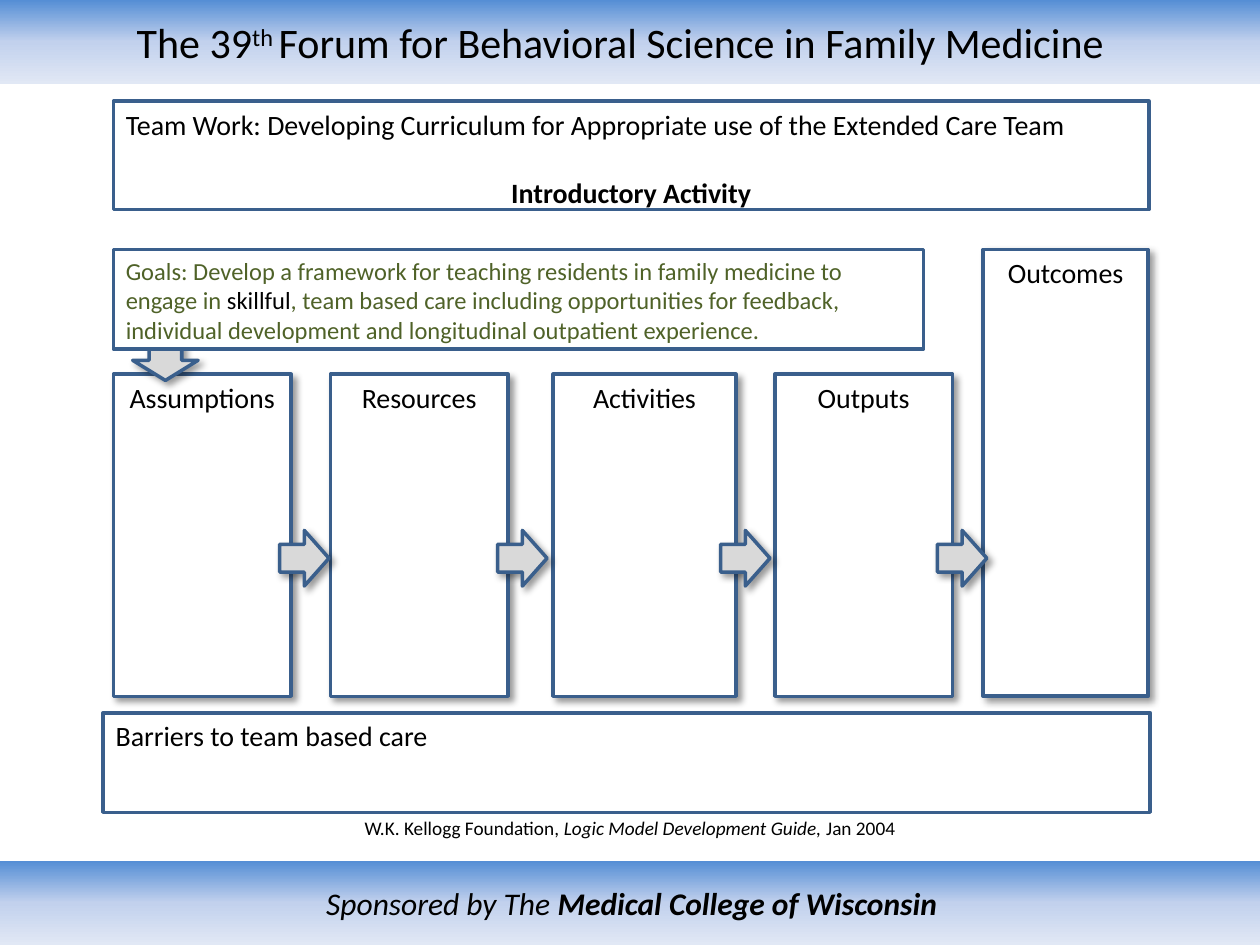
from dataclasses import dataclass

from pptx import Presentation
from pptx.dml.color import RGBColor
from pptx.enum import shapes as kinds, text as txt
from pptx.oxml import parse_xml
from pptx.oxml.ns import nsdecls
from pptx.util import Pt


@dataclass(frozen=True)
class Theme:
    font: str = "Calibri"
    ink: str = "000000"
    paper: str = "FFFFFF"
    border: str = "3A5F8C"
    arrow: str = "D9D9D9"
    goal: str = "4F6228"
    band: tuple = ((0, "558ED5"), (50, "C2D1ED"), (100, "E1E8F5"))
    title: int = 24
    sponsor: int = 18
    label: int = 16
    goal_size: int = 14
    citation: int = 11
    line: int = 2


THEME = Theme()
LEFT, CENTER = txt.PP_ALIGN.LEFT, txt.PP_ALIGN.CENTER
TOP, MIDDLE = txt.MSO_ANCHOR.TOP, txt.MSO_ANCHOR.MIDDLE
RECT, ARROW = kinds.MSO_SHAPE.RECTANGLE, kinds.MSO_SHAPE.RIGHT_ARROW


def add_run(paragraph, content, size=THEME.label, color=THEME.ink,
            bold=False, italic=False, raised=False):
    run = paragraph.add_run()
    run.text = content
    font = run.font
    font.name, font.size = THEME.font, Pt(size)
    font.bold, font.italic = bold, italic
    font.color.rgb = RGBColor.from_string(color)
    if raised:
        run._r.get_or_add_rPr().set("baseline", "30000")


def first_paragraph(shape, align=LEFT, anchor=TOP, wrap=True):
    frame = shape.text_frame
    frame.word_wrap = wrap
    frame.vertical_anchor = anchor
    paragraph = frame.paragraphs[0]
    paragraph.alignment = align
    return paragraph


def add_shadow(shape):
    """Soft black shadow, cast down and to the right."""
    shape._element.spPr.append(parse_xml(
        f'<a:effectLst {nsdecls("a")}>'
        f'<a:outerShdw blurRad="{Pt(4)}" dist="{Pt(3)}" dir="2700000" algn="tl" rotWithShape="0">'
        f'<a:srgbClr val="{THEME.ink}"><a:alpha val="40000"/></a:srgbClr>'
        '</a:outerShdw></a:effectLst>'))


def add_framed(slide, kind, box, fill=THEME.paper, shadow=False):
    shape = slide.shapes.add_shape(kind, *map(Pt, box))
    shape.fill.solid()
    shape.fill.fore_color.rgb = RGBColor.from_string(fill)
    shape.line.color.rgb = RGBColor.from_string(THEME.border)
    shape.line.width = Pt(THEME.line)
    if shadow:
        add_shadow(shape)
    else:
        shape.shadow.inherit = False
    return shape


def add_band(slide, box):
    """Full-width bar fading from blue at the top; returns its paragraph."""
    band = slide.shapes.add_shape(RECT, *map(Pt, box))
    band.shadow.inherit = False
    band.line.fill.background()
    stops = "".join(f'<a:gs pos="{pos * 1000}"><a:srgbClr val="{color}"/></a:gs>'
                    for pos, color in THEME.band)
    band._element.spPr.prstGeom.addnext(parse_xml(
        f'<a:gradFill {nsdecls("a")} rotWithShape="1"><a:gsLst>{stops}</a:gsLst>'
        '<a:lin ang="5400000" scaled="0"/></a:gradFill>'))
    return band, first_paragraph(band, CENTER, MIDDLE)


def add_header(slide, box):
    band, title = add_band(slide, box)
    band.text_frame.margin_right = Pt(18)
    add_run(title, "The 39", THEME.title)
    add_run(title, "th ", THEME.title, raised=True)
    add_run(title, "Forum for Behavioral Science in Family Medicine", THEME.title)


def add_footer(slide, box):
    _, sponsor = add_band(slide, box)
    add_run(sponsor, "Sponsored by The ", THEME.sponsor, italic=True)
    add_run(sponsor, "Medical College of Wisconsin", THEME.sponsor, bold=True, italic=True)


def add_topic(slide, box):
    topic = add_framed(slide, RECT, box)
    add_run(first_paragraph(topic),
            "Team Work: Developing Curriculum for Appropriate use of the Extended Care Team")
    activity = topic.text_frame.add_paragraph()
    activity.alignment = CENTER
    activity.space_before = Pt(19.5)
    add_run(activity, "Introductory Activity", bold=True)


def add_goals(slide, box):
    goals = first_paragraph(add_framed(slide, RECT, box))
    for content, color in (
            ("Goals: Develop a framework for teaching residents in family medicine "
             "to engage in ", THEME.goal),
            ("skillful", THEME.ink),
            (", team based care including opportunities for feedback, individual "
             "development and longitudinal outpatient experience.", THEME.goal)):
        add_run(goals, content, THEME.goal_size, color)


def add_logic_model(slide, box):
    """Four stages and the taller outcomes column, linked by arrows."""
    left, top, width, height = box
    stage_top = top + 71.2
    bottom = top + height
    stages = (("Assumptions", 0, 101.5), ("Resources", 124, 101.5),
              ("Activities", 251.3, 104.4), ("Outputs", 378, 101.5))
    columns = [(name, (left + x, stage_top, w, bottom - stage_top))
               for name, x, w in stages]
    outcomes_width = 94.3
    columns.append(("Outcomes", (left + width - outcomes_width, top, outcomes_width, height)))
    for name, column in columns:
        add_run(first_paragraph(add_framed(slide, RECT, column, shadow=True), CENTER), name)

    for x in (95, 219.6, 347, 470.9):
        add_framed(slide, ARROW, (left + x, top + 160.5, 28.2, 31.8), THEME.arrow, shadow=True)
    from_goals = add_framed(slide, ARROW, (left + 18.2, top + 44.6, 23, 37.4),
                            THEME.arrow, shadow=True)
    from_goals.rotation = 90


def add_barriers(slide, box):
    add_run(first_paragraph(add_framed(slide, RECT, box)), "Barriers to team based care")


def add_citation(slide, box):
    caption = slide.shapes.add_textbox(*map(Pt, box))
    citation = first_paragraph(caption, CENTER, wrap=False)
    caption.text_frame.auto_size = txt.MSO_AUTO_SIZE.SHAPE_TO_FIT_TEXT
    add_run(citation, "W.K. Kellogg Foundation, ", THEME.citation)
    add_run(citation, "Logic Model Development Guide,", THEME.citation, italic=True)
    add_run(citation, " Jan 2004", THEME.citation)


def main():
    deck = Presentation()
    deck.slide_width, deck.slide_height = Pt(720), Pt(540)
    slide = deck.slides.add_slide(deck.slide_layouts[6])
    add_header(slide, (0, 0, 720, 48))
    add_footer(slide, (0, 492, 722, 48))
    add_logic_model(slide, (64.8, 142.6, 591.3, 255.3))
    add_barriers(slide, (59, 407.3, 598.3, 56.9))
    add_goals(slide, (64.8, 142.6, 463, 56.9))
    add_topic(slide, (64.8, 57.8, 591.8, 62))
    add_citation(slide, (195, 463, 330, 33))
    deck.save("out.pptx")


if __name__ == "__main__":
    main()
